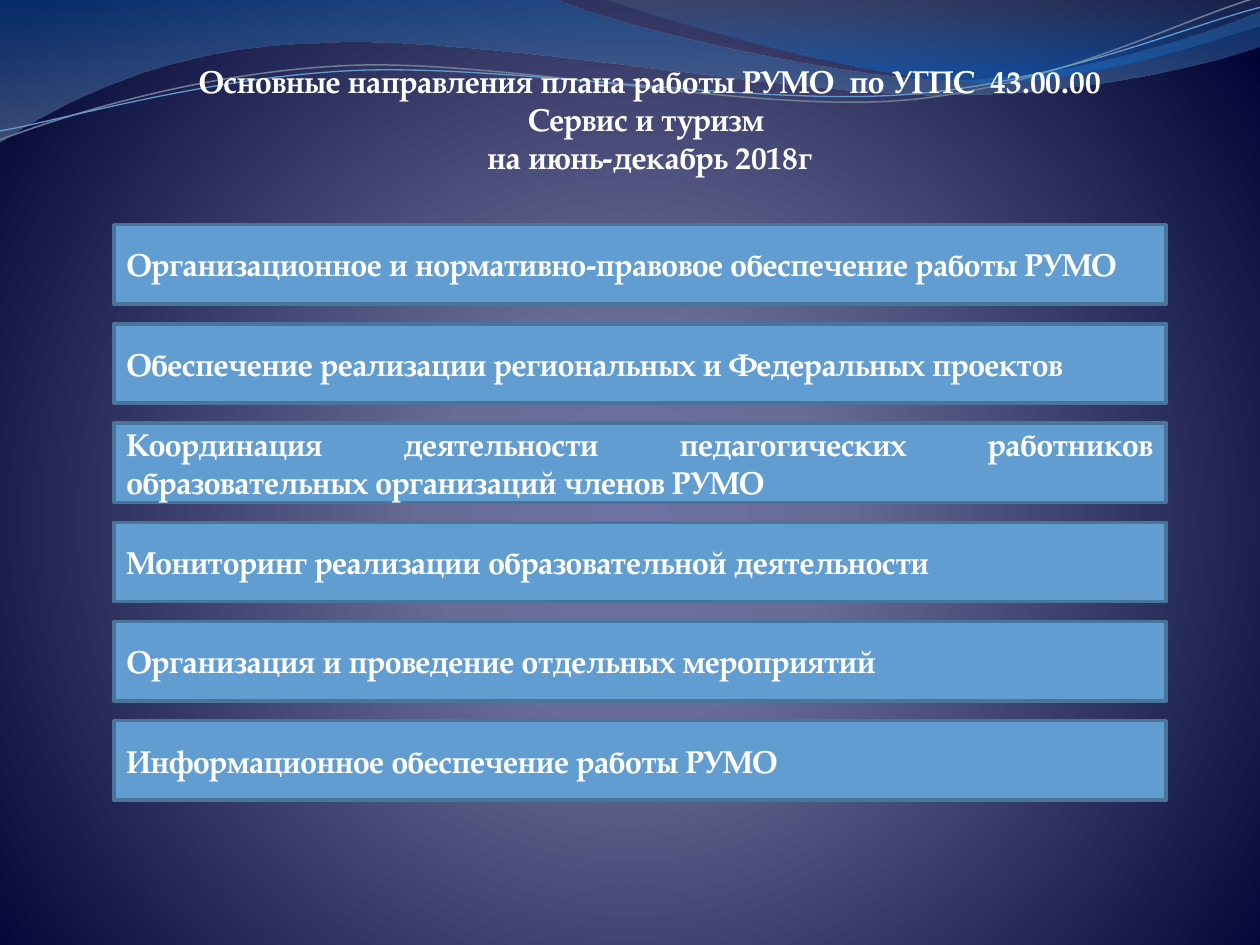
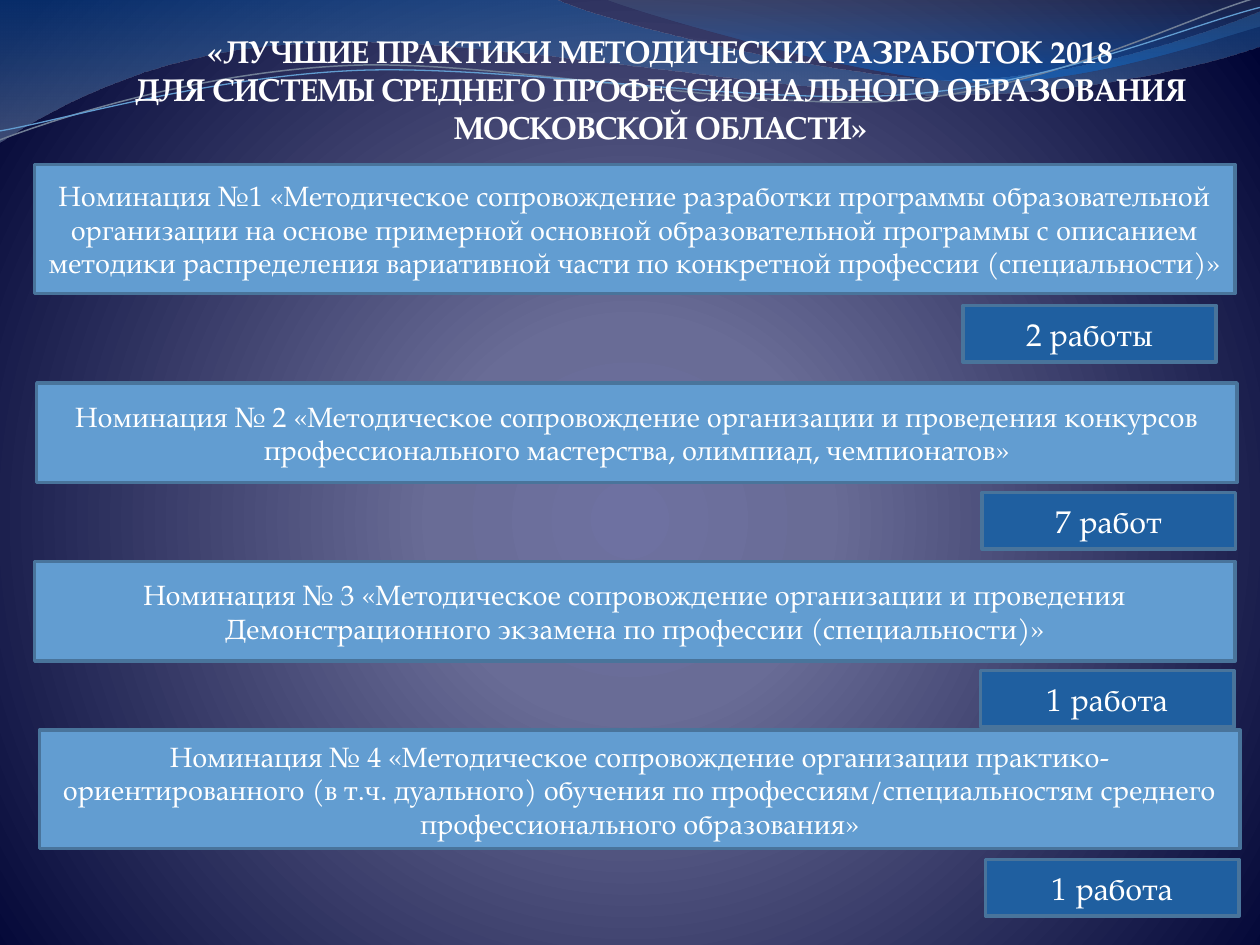
from dataclasses import dataclass
from typing import NamedTuple

from lxml import etree
from pptx import Presentation
from pptx import util as u
from pptx.dml.color import RGBColor
from pptx.enum import shapes, text
from pptx.oxml import ns

FONT = "TeX Gyre Pagella"
COLOURS = {
    "text": "FFFFFF",
    "card": "629DD1",
    "badge": "1F5FA0",
    "border": "49749B",
    "glow": "6E71A1",
    "dusk": "696C96",
    "night": "000434",
    "wave_blue": "125EAA",
    "wave_grey": "697FA4",
    "crest_grey": "596982",
    "crest_blue": "0670DA",
    "line_grey": "707E95",
    "line_blue": "629DD1",
}


class Stop(NamedTuple):
    position: int
    colour: str
    opacity: int = 100


class Box(NamedTuple):
    """Left, top, width and height in centimetres."""
    left: float
    top: float
    width: float
    height: float

    def lengths(self) -> list[u.Length]:
        return [u.Cm(value) for value in self]


@dataclass
class Wave:
    """Outline in centimetres: one pair is a line, three pairs a Bézier curve."""
    start: tuple
    segments: list
    stops: tuple = ()
    line: str = ""
    line_width: float = 0


@dataclass
class Nomination:
    text: str
    left: float
    top: float
    height: float
    works: str
    badge_left: float
    badge_top: float


BACKGROUND_STOPS = (Stop(0, "glow"), Stop(25, "dusk"), Stop(100, "night"))
BACKGROUND_DIRECTION = (
    '<a:path path="circle"><a:fillToRect l="10000" t="110000" r="10000" b="100000"/></a:path>'
)
DOWNWARD = '<a:lin ang="5400000" scaled="0"/>'

WAVES = [
    Wave((0, 0), [
        [(11.18, -0.03)],
        [(12.09, 0.43), (16.87, 1.6), (19.25, 1.6)],
        [(21.67, 1.6), (24.33, 0.66), (25.4, 0.23)],
        [(25.43, 0.91)],
        [(24.97, 1.12), (22.1, 1.93), (18.95, 1.91)],
        [(15.8, 1.91), (9.7, 0.71), (6.53, 0.86)],
        [(3.28, 0.91), (1.17, 2.11), (-0.03, 2.87)],
        [(0, 0)],
    ], stops=(Stop(0, "wave_blue", 45), Stop(100, "wave_grey", 55))),
    Wave((12.17, -0.03), [
        [(12.93, 0.28), (17.32, 1.57), (19.53, 1.65)],
        [(21.74, 1.75), (24.41, 0.81), (25.4, 0.53)],
        [(25.4, 0)],
        [(12.17, -0.03)],
    ], stops=(Stop(0, "crest_grey", 30), Stop(80, "crest_blue", 45))),
    Wave((0, 2.82), [
        [(1.22, 2.36), (4.01, 1.45), (7.04, 1.32)],
        [(10.03, 1.19), (15.06, 2.26), (18.11, 2.03)],
        [(21.16, 1.8), (23.83, 0.38), (25.35, -0.05)],
    ], line="line_grey", line_width=0.85),
    Wave((0, 2.64), [
        [(1.19, 2.44), (4.17, 1.55), (7.19, 1.42)],
        [(10.24, 1.3), (15.16, 2.13), (18.21, 1.91)],
        [(21.23, 1.7), (23.9, 0.53), (25.4, 0.15)],
    ], line="line_blue", line_width=0.75),
]

DIRECTIONS = [
    "Организационное и нормативно-правовое обеспечение работы РУМО",
    "Обеспечение реализации региональных и Федеральных проектов",
    "Координация деятельности педагогических работников образовательных организаций членов РУМО",
    "Мониторинг реализации образовательной деятельности",
    "Организация и проведение отдельных мероприятий",
    "Информационное обеспечение работы РУМО",
]

NOMINATIONS = [
    Nomination(
        "Номинация №1 «Методическое сопровождение разработки программы образовательной "
        "организации на основе примерной основной образовательной программы с описанием "
        "методики распределения вариативной части по конкретной профессии (специальности)»",
        0.7, 3.32, 2.6, "2 работы", 19.41, 6.16),
    Nomination(
        "Номинация № 2 «Методическое сопровождение организации и проведения конкурсов "
        "профессионального мастерства, олимпиад, чемпионатов»",
        0.74, 7.72, 2.01, "7 работ", 19.8, 9.93),
    Nomination(
        "Номинация № 3 «Методическое сопровождение организации и проведения "
        "Демонстрационного экзамена по профессии (специальности)»",
        0.7, 11.32, 2.01, "1 работа", 19.77, 13.52),
    Nomination(
        "Номинация № 4 «Методическое сопровождение организации практико-ориентированного "
        "(в т.ч. дуального) обучения по профессиям/специальностям среднего "
        "профессионального образования»",
        0.8, 14.72, 2.39, "1 работа", 19.87, 17.33),
]


def rgb(name: str) -> RGBColor:
    return RGBColor.from_string(COLOURS[name])


def set_gradient(parent, stops: tuple, direction: str) -> None:
    """Replace the solid fill inside parent with a gradient."""
    stop_xml = "".join(
        f'<a:gs pos="{stop.position * 1000}"><a:srgbClr val="{COLOURS[stop.colour]}">'
        f'<a:alpha val="{stop.opacity * 1000}"/></a:srgbClr></a:gs>'
        for stop in stops
    )
    gradient = etree.fromstring(
        f'<a:gradFill {ns.nsdecls("a")} rotWithShape="1">'
        f"<a:gsLst>{stop_xml}</a:gsLst>{direction}</a:gradFill>"
    )
    parent.replace(parent.find(ns.qn("a:solidFill")), gradient)


def bend_segments(shape, segments: list) -> None:
    """Join each run of three control-point lines into one Bézier curve."""
    lines = iter(shape.element.xpath(".//a:lnTo"))
    for segment in segments:
        first, *others = [next(lines) for _ in segment]
        if others:
            first.tag = ns.qn("a:cubicBezTo")
            for line in others:
                first.append(line[0])
                line.getparent().remove(line)


def draw_wave(slide, wave: Wave):
    points = [(u.Cm(x), u.Cm(y)) for segment in wave.segments for x, y in segment]
    builder = slide.shapes.build_freeform(*(u.Cm(value) for value in wave.start))
    builder.add_line_segments(points, close=bool(wave.stops))
    shape = builder.convert_to_shape()
    bend_segments(shape, wave.segments)
    shape.shadow.inherit = False
    if wave.stops:
        shape.fill.solid()
        set_gradient(shape.element.spPr, wave.stops, DOWNWARD)
        shape.line.fill.background()
    else:
        shape.fill.background()
        shape.line.color.rgb = rgb(wave.line)
        shape.line.width = u.Pt(wave.line_width)
    return shape


def move_waves_to_layout(slide) -> None:
    """Draw the waves, then hand them to the layout that all slides share."""
    for number, wave in enumerate(WAVES, start=101):
        element = draw_wave(slide, wave).element
        element.xpath("p:nvSpPr/p:cNvPr")[0].set("id", str(number))
        slide.slide_layout.shapes.element.append(element)


def format_paragraph(paragraph, size: float, bold: bool, alignment) -> None:
    paragraph.alignment = alignment
    paragraph.font.name = FONT
    paragraph.font.size = u.Pt(size)
    paragraph.font.bold = bold
    paragraph.font.color.rgb = rgb("text")


def add_titled_slide(presentation, lines: list[str], box: Box):
    slide = presentation.slides.add_slide(presentation.slide_layouts.get_by_name("Title Only"))
    title = slide.shapes.title
    title.left, title.top, title.width, title.height = box.lengths()
    frame = title.text_frame
    frame.text = "\n".join(lines)
    frame.word_wrap = True
    frame.auto_size = text.MSO_AUTO_SIZE.NONE
    frame.vertical_anchor = text.MSO_ANCHOR.TOP
    for paragraph in frame.paragraphs:
        format_paragraph(paragraph, 18, True, text.PP_ALIGN.CENTER)
    return slide


def add_panel(slide, wording: str, box: Box, fill: str = "card", size: float = 18,
              bold: bool = False, alignment=text.PP_ALIGN.CENTER) -> None:
    shape = slide.shapes.add_shape(shapes.MSO_SHAPE.RECTANGLE, *box.lengths())
    shape.shadow.inherit = False
    shape.fill.solid()
    shape.fill.fore_color.rgb = rgb(fill)
    shape.line.color.rgb = rgb("border")
    shape.line.width = u.Pt(2)
    frame = shape.text_frame
    frame.text = wording
    frame.word_wrap = True
    frame.vertical_anchor = text.MSO_ANCHOR.MIDDLE
    format_paragraph(frame.paragraphs[0], size, bold, alignment)


def build_directions(presentation):
    slide = add_titled_slide(presentation, [
        "Основные направления плана работы РУМО  по УГПС  43.00.00 Сервис и туризм ",
        "на июнь-декабрь 2018г",
    ], Box(3.1, 1.13, 20, 2.57))
    for row, direction in enumerate(DIRECTIONS):
        add_panel(slide, direction, Box(2.3, 4.53 + 2 * row, 21.21, 1.6),
                  bold=True, alignment=text.PP_ALIGN.JUSTIFY)
    return slide


def build_nominations(presentation) -> None:
    slide = add_titled_slide(presentation, [
        "«ЛУЧШИЕ ПРАКТИКИ МЕТОДИЧЕСКИХ РАЗРАБОТОК 2018",
        "ДЛЯ СИСТЕМЫ СРЕДНЕГО ПРОФЕССИОНАЛЬНОГО ОБРАЗОВАНИЯ МОСКОВСКОЙ ОБЛАСТИ»",
    ], Box(2.42, 0.52, 21.8, 2.57))
    for item in NOMINATIONS:
        add_panel(slide, item.text, Box(item.left, item.top, 24.2, item.height), size=16)
        add_panel(slide, item.works, Box(item.badge_left, item.badge_top, 5.11, 1.14),
                  fill="badge")


def main() -> None:
    presentation = Presentation()
    presentation.slide_width, presentation.slide_height = u.Cm(25.4), u.Cm(19.05)
    master = presentation.slide_master
    master.background.fill.solid()
    set_gradient(master.element.xpath(".//p:bgPr")[0], BACKGROUND_STOPS, BACKGROUND_DIRECTION)
    move_waves_to_layout(build_directions(presentation))
    build_nominations(presentation)
    presentation.save("out.pptx")


if __name__ == "__main__":
    main()
